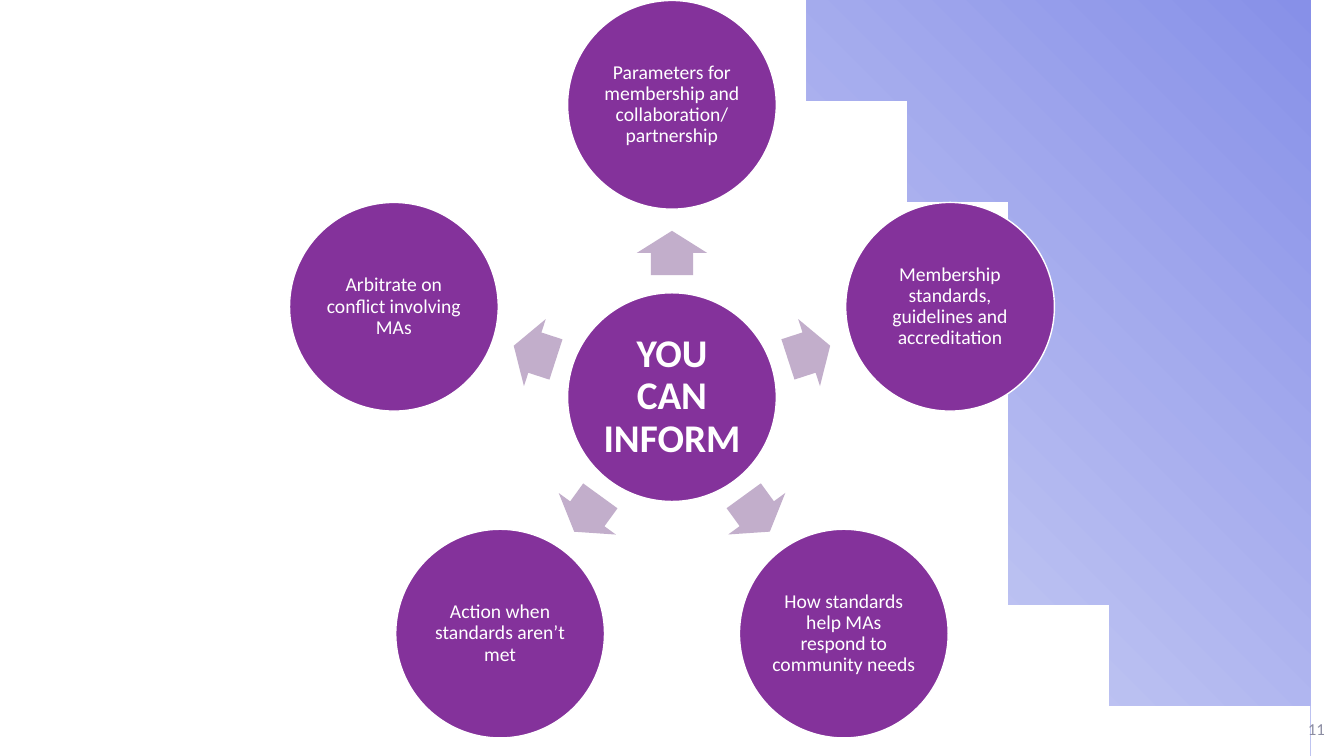
"""Build a radial slide of five topics around a central message."""
from math import cos, sin, radians
from pptx import Presentation
from pptx.dml.color import RGBColor as Rgb
from pptx.enum.shapes import MSO_SHAPE as Kind
from pptx.enum.text import MSO_ANCHOR as Anchor, PP_ALIGN as Align
from pptx.util import Inches as In, Pt

theme = dict(font="Calibri", disc="84329B", arrow="C2AECB", white="FFFFFF",
             light="D9DCF7", dark="8790E8", grey="8C8DA3", big=28, body=14, small=12)
topics = ["Parameters for membership and collaboration/ partnership",
          "Membership standards, guidelines and accreditation",
          "How standards help MAs respond to community needs",
          "Action when standards aren’t met",
          "Arbitrate on conflict involving MAs"]
wide, high = 13.33, 7.5
mid_x, mid_y = wide / 2, 3.94
disc, ring, reach = 2.07, 2.9, 1.43
long, tall = 0.44, 0.7

deck = Presentation()
deck.slide_width, deck.slide_height = In(wide), In(high)
slide = deck.slides.add_slide(deck.slide_layouts[6])
shapes = slide.shapes


def write(frame, text, size, color, align, inset, bold=False):
    frame.word_wrap = True
    frame.margin_left = frame.margin_right = In(inset)
    frame.margin_top = frame.margin_bottom = In(inset)
    para = frame.paragraphs[0]
    para.alignment = align
    para.line_spacing = 0.9
    run = para.add_run()
    run.text = text
    font = run.font
    font.name, font.size, font.bold = theme["font"], Pt(theme[size]), bold
    font.color.rgb = Rgb.from_string(theme[color])


def place(kind, x, y, w, h, fill):
    shape = shapes.add_shape(kind, In(x - w / 2), In(y - h / 2), In(w), In(h))
    shape.shadow.inherit = False
    shape.fill.solid()
    shape.fill.fore_color.rgb = Rgb.from_string(theme[fill])
    shape.line.fill.background()
    return shape


edge = [(6.85, 0), (7.09, 0.3), (7.34, 0.4), (7.56, 0.5), (8.28, 0.82), (8.9, 1.34),
        (9.36, 2.01), (9.77, 2.6), (9.95, 3.22), (10.08, 3.87), (10.25, 4.81),
        (10.32, 5.41), (10.76, 6.05), (11.21, 6.7), (11.95, 7.19), (12.84, high)]
steps = 24
curve = []
for k in range(0, len(edge) - 1, 3):
    for n in range(1, steps + 1):
        t = n / steps
        parts = ((1 - t) ** 3, 3 * t * (1 - t) ** 2, 3 * t * t * (1 - t), t ** 3)
        curve.append([sum(a * p[i] for a, p in zip(parts, edge[k:k + 4])) for i in (0, 1)])
pen = shapes.build_freeform(*edge[0], scale=In(1))
pen.add_line_segments(curve + [(wide, high), (wide, 0)], close=True)
wave = pen.convert_to_shape()
wave.shadow.inherit = False
wave.line.fill.background()
wave.fill.gradient()
wave.fill.gradient_angle = 45
for stop, tone, spot in zip(wave.fill.gradient_stops, ("light", "dark"), (0, 1)):
    stop.color.rgb = Rgb.from_string(theme[tone])
    stop.position = spot

page = shapes.add_textbox(In(10.14), In(6.93), In(3), In(0.4)).text_frame
page.vertical_anchor = Anchor.BOTTOM
write(page, "11", "small", "grey", Align.RIGHT, 0)

discs = [("YOU CAN INFORM", mid_x, mid_y, "big", 0.04)]
for i, topic in enumerate(topics):
    turn = 72 * i - 90
    dx, dy = cos(radians(turn)), sin(radians(turn))
    arrow = place(Kind.RIGHT_ARROW, mid_x + reach * dx, mid_y + reach * dy, long, tall, "arrow")
    arrow.adjustments[0], arrow.adjustments[1] = 0.6, 0.5
    arrow.rotation = turn % 360
    discs.append((topic, mid_x + ring * dx, mid_y + ring * dy, "body", 0.02))

for text, x, y, size, inset in discs:
    ball = place(Kind.OVAL, x, y, disc, disc, "disc")
    ball.line.color.rgb = Rgb.from_string(theme["white"])
    ball.line.width = Pt(1)
    ball.text_frame.vertical_anchor = Anchor.MIDDLE
    write(ball.text_frame, text, size, "white", Align.CENTER, inset, size == "big")

deck.save("out.pptx")
